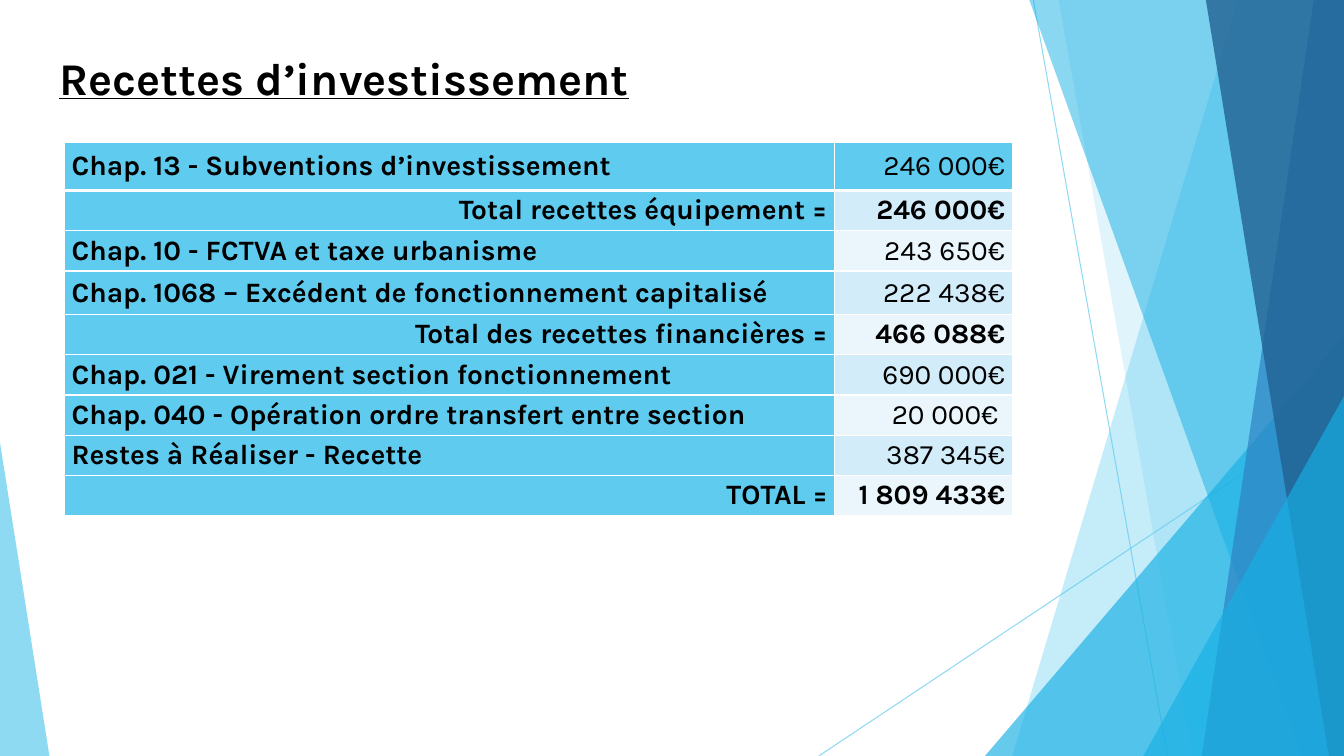
from dataclasses import dataclass

from lxml.etree import SubElement
from pptx import Presentation
from pptx.dml.color import RGBColor
from pptx.enum.shapes import MSO_CONNECTOR, MSO_SHAPE
from pptx.enum.text import MSO_ANCHOR, PP_ALIGN
from pptx.oxml import parse_xml
from pptx.oxml.ns import nsdecls, qn
from pptx.util import Inches, Pt

SLIDE_W, SLIDE_H = Inches(13.33), Inches(7.5)
FONT = "Karla"
COLORS = {
    "sky": "5FCBEF",
    "cyan": "17B0E4",
    "blue": "2E83C3",
    "navy": "226292",
    "band_dark": "D2ECF9",
    "band_light": "EAF6FC",
    "white": "FFFFFF",
    "text": "000000",
}


# Positions and sizes are percentages of the slide's width or height.
@dataclass
class Ray:
    x1: float
    y1: float
    x2: float
    y2: float


@dataclass
class Facet:
    """A full-height panel from a slanted left edge to the slide's right edge."""
    top_x: float
    bottom_x: float
    color: str
    opacity: int


@dataclass
class Wedge:
    """A right triangle standing on the slide's bottom edge."""
    left: float
    top: float
    width: float
    apex: float
    color: str
    opacity: int


@dataclass
class Receipt:
    label: str
    amount: str
    is_total: bool = False
    height: float = 5.33


RAYS = [Ray(76.89, 0, 86.87, 100), Ray(100, 53.73, 60.92, 100)]
PANELS = [
    Facet(92.12, 75.32, "sky", 36),
    Facet(78.77, 88.75, "sky", 20),
    Wedge(73.29, 44.4, 26.71, 1, "cyan", 66),
    Facet(76.59, 96.85, "cyan", 50),
    Facet(97.75, 89.42, "blue", 70),
    Facet(89.72, 98.87, "navy", 80),
    Wedge(85.07, 52.4, 14.93, 1, "cyan", 66),
    Wedge(0, 58.53, 3.68, 0, "sky", 70),
]
RECEIPTS = [
    Receipt("Chap. 13 - Subventions d’investissement", "246 000€", height=6.4),
    Receipt("Total recettes équipement =", "246 000€", is_total=True),
    Receipt("Chap. 10 - FCTVA et taxe urbanisme", "243 650€"),
    Receipt("Chap. 1068 – Excédent de fonctionnement capitalisé", "222 438€", height=5.73),
    Receipt("Total des recettes financières =", "466 088€", is_total=True),
    Receipt("Chap. 021 - Virement section fonctionnement", "690 000€"),
    Receipt("Chap. 040 - Opération ordre transfert entre section", "20 000€ "),
    Receipt("Restes à Réaliser - Recette", "387 345€"),
    Receipt("TOTAL =", "1 809 433€", is_total=True),
]
COLUMNS = [57.31, 13.2]


def x(percent: float) -> int:
    return round(SLIDE_W * percent / 100)


def y(percent: float) -> int:
    return round(SLIDE_H * percent / 100)


def rgb(name: str) -> RGBColor:
    return RGBColor.from_string(COLORS[name])


def set_opacity(sp, percent: int) -> None:
    for color in sp._element.spPr.iter(qn("a:srgbClr")):
        SubElement(color, qn("a:alpha")).set("val", str(percent * 1000))


def draw_ray(shapes, ray: Ray) -> None:
    line = shapes.add_connector(
        MSO_CONNECTOR.STRAIGHT, x(ray.x1), y(ray.y1), x(ray.x2), y(ray.y2))
    line.line.color.rgb = rgb("sky")
    line.line.width = Pt(0.75)
    set_opacity(line, 70)
    SubElement(line._element.spPr, qn("a:effectLst"))


def draw_panel(shapes, panel: Facet | Wedge) -> None:
    if isinstance(panel, Facet):
        outline = shapes.build_freeform(x(panel.top_x), 0)
        outline.add_line_segments(
            [(SLIDE_W, 0), (SLIDE_W, SLIDE_H), (x(panel.bottom_x), SLIDE_H)], close=True)
        sp = outline.convert_to_shape()
    else:
        sp = shapes.add_shape(
            MSO_SHAPE.ISOSCELES_TRIANGLE, x(panel.left), y(panel.top),
            x(panel.width), y(100 - panel.top))
        sp.adjustments[0] = panel.apex
    sp.shadow.inherit = False
    sp.line.fill.background()
    sp.fill.solid()
    sp.fill.fore_color.rgb = rgb(panel.color)
    set_opacity(sp, panel.opacity)


def style_paragraph(p, size: float, bold: bool) -> None:
    p.font.name = FONT
    p.font.size = Pt(size)
    p.font.bold = bold
    p.font.color.rgb = rgb("text")


def draw_title(shapes, text: str) -> None:
    tf = shapes.add_textbox(x(3.68), y(5.47), x(70.52), y(9.6)).text_frame
    tf.word_wrap = True
    tf.vertical_anchor = MSO_ANCHOR.MIDDLE
    p = tf.paragraphs[0]
    p.text = text
    style_paragraph(p, 32.4, bold=True)
    p.font.underline = True


def set_borders(cell, row: int) -> None:
    """Thin white borders, with a thick one between the first two rows."""
    widths = {"L": 1, "R": 1, "T": 3 if row == 1 else 1, "B": 3 if row == 0 else 1}
    tc_pr = cell._tc.get_or_add_tcPr()
    for i, (side, width) in enumerate(widths.items()):
        tc_pr.insert(i, parse_xml(
            f'<a:ln{side} {nsdecls("a")} w="{Pt(width)}"><a:solidFill>'
            f'<a:srgbClr val="{COLORS["white"]}"/></a:solidFill></a:ln{side}>'))


def fill_cell(cell, text: str, color: str, bold: bool, align: PP_ALIGN) -> None:
    cell.fill.solid()
    cell.fill.fore_color.rgb = rgb(color)
    cell.vertical_anchor = MSO_ANCHOR.MIDDLE
    cell.margin_left = cell.margin_right = Inches(0.07)
    cell.margin_top = cell.margin_bottom = 0
    p = cell.text_frame.paragraphs[0]
    p.text = text
    p.alignment = align
    style_paragraph(p, 20, bold)


def draw_receipts(shapes) -> None:
    height = sum(receipt.height for receipt in RECEIPTS)
    table = shapes.add_table(
        len(RECEIPTS), len(COLUMNS), x(4.8), y(18.8), x(sum(COLUMNS)), y(height)).table
    table.horz_banding = False
    for column, width in zip(table.columns, COLUMNS):
        column.width = x(width)
    for row, receipt in enumerate(RECEIPTS):
        table.rows[row].height = y(receipt.height)
        label, amount = table.cell(row, 0), table.cell(row, 1)
        band = "sky" if row == 0 else "band_dark" if row % 2 else "band_light"
        label_align = PP_ALIGN.RIGHT if receipt.is_total else PP_ALIGN.LEFT
        fill_cell(label, receipt.label, "sky", True, label_align)
        fill_cell(amount, receipt.amount, band, receipt.is_total, PP_ALIGN.RIGHT)
        for cell in (label, amount):
            set_borders(cell, row)


def main() -> None:
    prs = Presentation()
    prs.slide_width, prs.slide_height = SLIDE_W, SLIDE_H
    shapes = prs.slides.add_slide(prs.slide_layouts[6]).shapes
    for ray in RAYS:
        draw_ray(shapes, ray)
    for panel in PANELS:
        draw_panel(shapes, panel)
    draw_title(shapes, "Recettes d’investissement")
    draw_receipts(shapes)
    prs.save("out.pptx")


if __name__ == "__main__":
    main()
